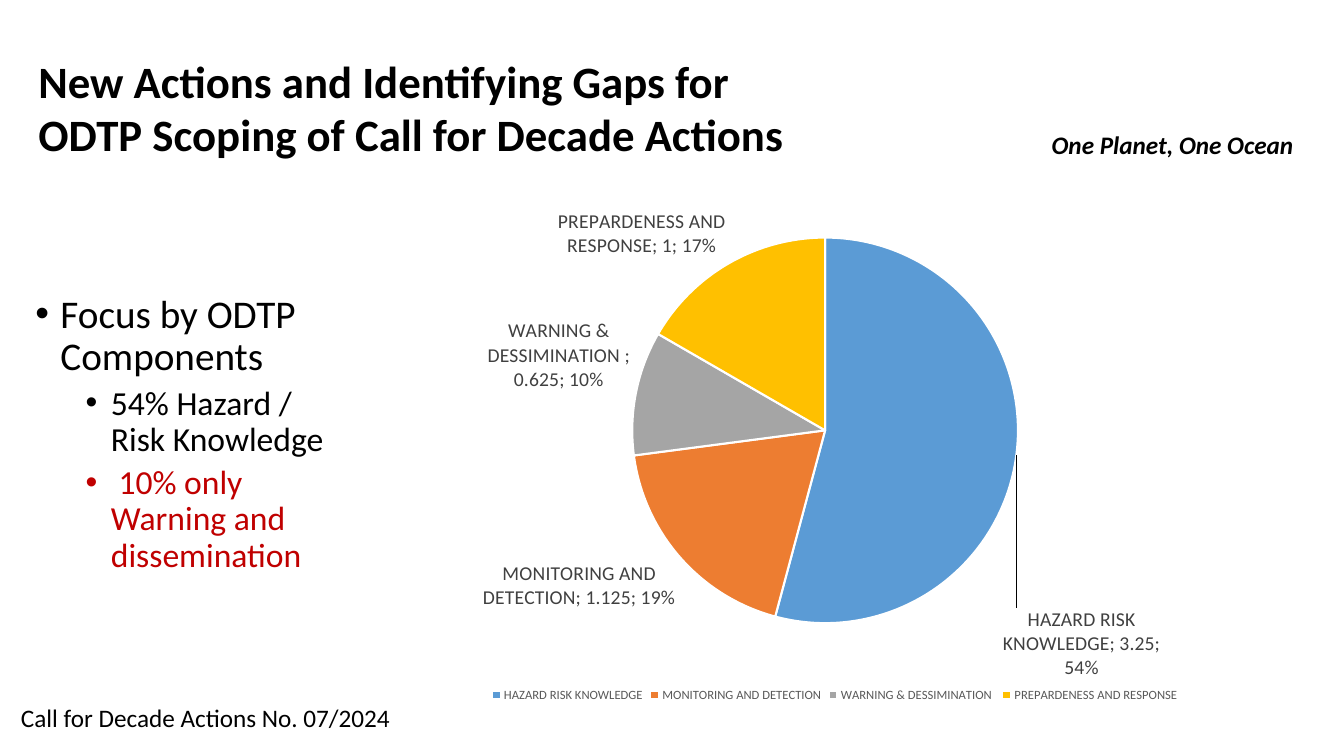
from pptx import Presentation
from pptx.chart.data import CategoryChartData
from pptx.dml.color import RGBColor
from pptx.enum.chart import XL_CHART_TYPE, XL_LABEL_POSITION, XL_LEGEND_POSITION
from pptx.enum.text import MSO_ANCHOR, MSO_AUTO_SIZE, PP_ALIGN
from pptx.oxml import parse_xml
from pptx.oxml.ns import nsdecls, qn
from pptx.util import Inches, Pt

BLACK = RGBColor(0x00, 0x00, 0x00)
WHITE = RGBColor(0xFF, 0xFF, 0xFF)
RED = RGBColor(0xC0, 0x00, 0x00)
LABEL_GRAY = RGBColor(0x40, 0x40, 0x40)
LEGEND_GRAY = RGBColor(0x59, 0x59, 0x59)
BLUE = RGBColor(0x5B, 0x9B, 0xD5)
ORANGE = RGBColor(0xED, 0x7D, 0x31)
GRAY = RGBColor(0xA5, 0xA5, 0xA5)
GOLD = RGBColor(0xFF, 0xC0, 0x00)
PIE = XL_CHART_TYPE.PIE
OUTSIDE_END = XL_LABEL_POSITION.OUTSIDE_END
BOTTOM = XL_LEGEND_POSITION.BOTTOM
LEFT, CENTER = PP_ALIGN.LEFT, PP_ALIGN.CENTER
FONT = "Calibri"

TITLE = "New Actions and Identifying Gaps for \vODTP Scoping of Call for Decade Actions"
MOTTO = "One Planet, One Ocean"
FOOTNOTE = "Call for Decade Actions No. 07/2024"
BULLETS = [
    ("Focus by ODTP Components", 0, BLACK),
    ("54% Hazard / Risk Knowledge", 1, BLACK),
    (" 10% only Warning and dissemination", 1, RED),
]
BULLET_LEVELS = [(28, 10, 0.25), (24, 5, 0.75)]
COMPONENTS = [
    ("HAZARD RISK KNOWLEDGE", 3.25, BLUE),
    ("MONITORING AND DETECTION", 1.125, ORANGE),
    ("WARNING & DESSIMINATION ", 0.625, GRAY),
    ("PREPARDENESS AND RESPONSE", 1, GOLD),
]
PIE_AREA = {"x": 0.29, "y": 0.1, "w": 0.4, "h": 0.74}
HAZARD_LABEL_SHIFT = {"x": -0.02, "y": 0.29}


def style_font(font, size, color, bold=False, italic=False):
    """Apply the slide typeface with the given size, colour and emphasis."""
    font.name, font.size, font.bold, font.italic = FONT, Pt(size), bold, italic
    font.color.rgb = color


def place(shape, left, top, width, height):
    """Set the position and size of a shape in inches."""
    shape.left, shape.top = Inches(left), Inches(top)
    shape.width, shape.height = Inches(width), Inches(height)


def write_line(shape, text, size, alignment=LEFT, bold=False, italic=False, wrap=True):
    """Fill a shape with one formatted paragraph."""
    frame = shape.text_frame
    frame.text = text
    frame.word_wrap = wrap
    frame.auto_size = MSO_AUTO_SIZE.NONE
    frame.vertical_anchor = MSO_ANCHOR.TOP
    paragraph = frame.paragraphs[0]
    paragraph.alignment = alignment
    for run in paragraph.runs:
        style_font(run.font, size, BLACK, bold, italic)


def write_bullets(shape):
    """Fill the body placeholder with the two-level list."""
    frame = shape.text_frame
    frame.text = "\n".join(text for text, _, _ in BULLETS)
    frame.auto_size = MSO_AUTO_SIZE.NONE
    for paragraph, (_, level, color) in zip(frame.paragraphs, BULLETS):
        size, space_before, indent = BULLET_LEVELS[level]
        paragraph.level = level
        paragraph.line_spacing = 0.9
        paragraph.space_before = Pt(space_before)
        style_font(paragraph.runs[0].font, size, color)
        properties = paragraph._p.get_or_add_pPr()
        properties.set("marL", str(Inches(indent)))
        properties.set("indent", str(Inches(-0.25)))
        properties.append(parse_xml(f'<a:buFont {nsdecls("a")} typeface="Arial"/>'))
        properties.append(parse_xml(f'<a:buChar {nsdecls("a")} char="•"/>'))


def manual_layout(values, inner=False):
    """Return a chart layout element built from fractions of the chart."""
    target = '<c:layoutTarget val="inner"/><c:xMode val="edge"/><c:yMode val="edge"/>' if inner else ""
    parts = "".join(f'<c:{name} val="{value}"/>' for name, value in values.items())
    return parse_xml(
        f'<c:layout {nsdecls("c")}><c:manualLayout>{target}{parts}</c:manualLayout></c:layout>'
    )


def add_component_pie(slide):
    """Add the pie chart of ODTP components with labels and legend."""
    chart_data = CategoryChartData()
    chart_data.categories = [name for name, _, _ in COMPONENTS]
    chart_data.add_series("Series 1", [value for _, value, _ in COMPONENTS])
    chart = slide.shapes.add_chart(
        PIE, Inches(3.48), Inches(1.84), Inches(9.6), Inches(5.17), chart_data
    ).chart
    chart.has_title = False
    style_font(chart.font, 10, BLACK)
    chart.has_legend = True
    chart.legend.position = BOTTOM
    chart.legend.include_in_layout = False
    style_font(chart.legend.font, 9, LEGEND_GRAY)

    plot = chart.plots[0]
    plot.vary_by_categories = True
    series = plot.series[0]
    for index, (_, _, color) in enumerate(COMPONENTS):
        slice_format = series.points[index].format
        slice_format.fill.solid()
        slice_format.fill.fore_color.rgb = color
        slice_format.line.color.rgb = WHITE
        slice_format.line.width = Pt(1.5)

    labels = series.data_labels
    hazard_label = series.points[0].data_label
    for label in (labels, hazard_label):
        style_font(label.font, 14, LABEL_GRAY)
        label.position = OUTSIDE_END
    labels_element = labels._element
    hazard_element = labels_element.find(qn("c:dLbl"))
    for element in (labels_element, hazard_element):
        for name in ("showVal", "showCatName", "showPercent"):
            element.find(qn(f"c:{name}")).set("val", "1")
        separator = parse_xml(f'<c:separator {nsdecls("c")}>; </c:separator>')
        element.find(qn("c:showPercent")).getparent()
        last_flag = element.find(qn("c:showBubbleSize"))
        if last_flag is None:
            last_flag = element.find(qn("c:showPercent"))
        last_flag.addnext(separator)
    hazard_element.find(qn("c:idx")).addnext(manual_layout(HAZARD_LABEL_SHIFT))

    plot_area = chart._chartSpace.chart.plotArea
    old_layout = plot_area.find(qn("c:layout"))
    if old_layout is not None:
        plot_area.remove(old_layout)
    plot_area.insert(0, manual_layout(PIE_AREA, inner=True))


def main():
    """Build the slide and save it."""
    presentation = Presentation()
    presentation.slide_width, presentation.slide_height = Inches(13.33), Inches(7.5)
    slide = presentation.slides.add_slide(presentation.slide_layouts[1])
    title, body = slide.shapes.title, slide.placeholders[1]
    place(title, 0.28, 0.48, 7.73, 1.18)
    write_line(title, TITLE, 32, bold=True, wrap=False)
    place(body, 0.25, 2.87, 3.13, 3.8)
    write_bullets(body)
    add_component_pie(slide)
    motto = slide.shapes.add_textbox(Inches(9.93), Inches(1.23), Inches(3.4), Inches(0.4))
    write_line(motto, MOTTO, 18, CENTER, bold=True, italic=True)
    footnote = slide.shapes.add_textbox(Inches(0.11), Inches(6.92), Inches(6.73), Inches(0.4))
    write_line(footnote, FOOTNOTE, 18)
    presentation.save("out.pptx")


if __name__ == "__main__":
    main()
